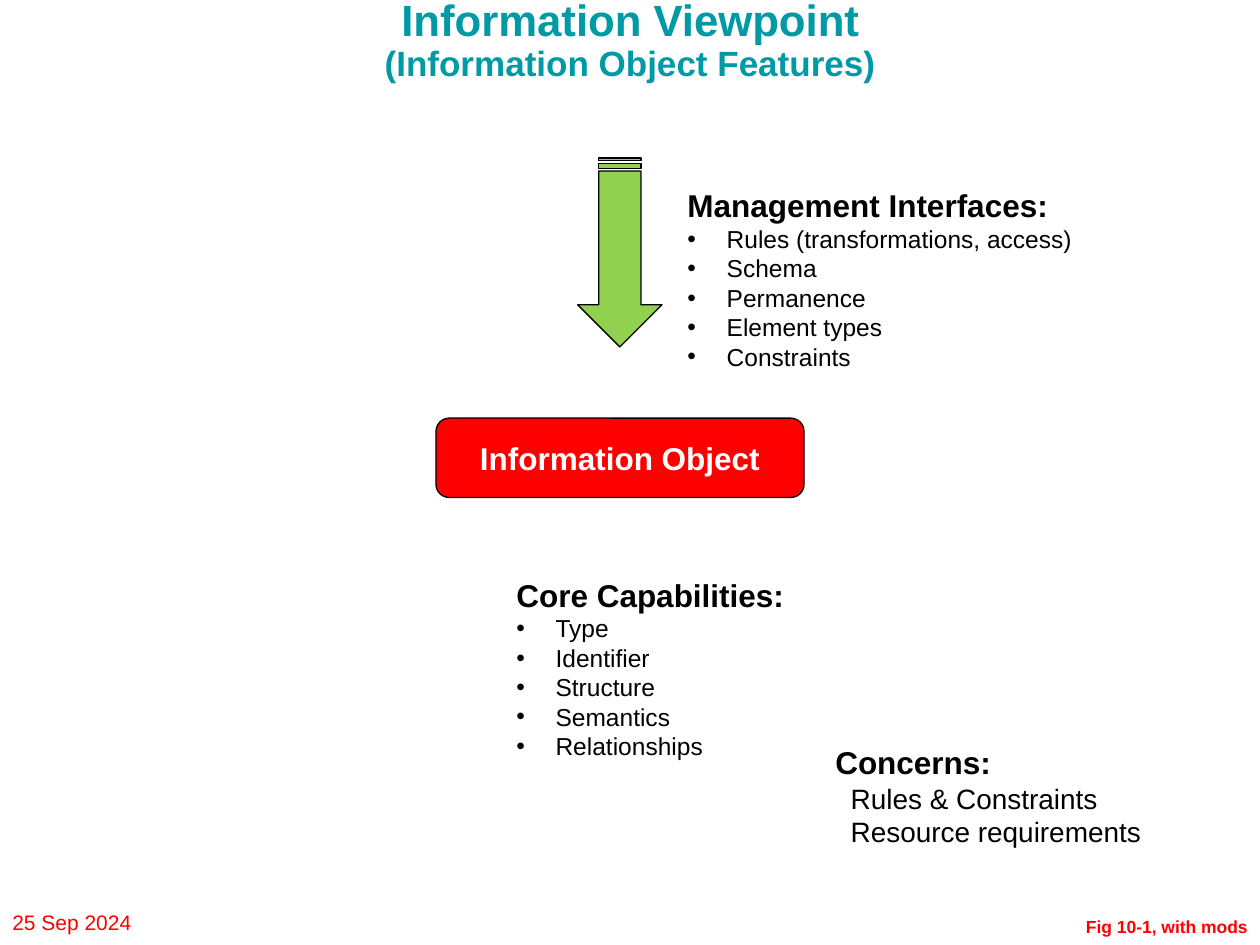
from pptx import Presentation
from pptx.util import Cm, Pt
from pptx.dml.color import RGBColor
from pptx.enum.shapes import MSO_SHAPE
from pptx.enum.text import MSO_ANCHOR, PP_ALIGN
from lxml import etree

ROUND = MSO_SHAPE.ROUNDED_RECTANGLE
ARROW = MSO_SHAPE.STRIPED_RIGHT_ARROW
TOP, MID = MSO_ANCHOR.TOP, MSO_ANCHOR.MIDDLE
LEFT, MIDDLE, RIGHT = PP_ALIGN.LEFT, PP_ALIGN.CENTER, PP_ALIGN.RIGHT
FONT = "Arial"
BLACK, WHITE, RED, GREEN, TEAL = "000000", "FFFFFF", "FF0000", "92D050", "0099A6"
NS = "{http://schemas.openxmlformats.org/drawingml/2006/main}"


def color(code):
    return RGBColor.from_string(code)


def add_line(frame, text, size, code=BLACK, bold=False, align=LEFT):
    """Add one paragraph with one run, using the empty first one if free."""
    para = frame.paragraphs[0]
    if para.runs:
        para = frame.add_paragraph()
    para.alignment = align
    run = para.add_run()
    run.text = text
    font = run.font
    font.name, font.size, font.bold = FONT, Pt(size), bold
    font.color.rgb = color(code)
    return para


def indent(para, left, bullet=None):
    """Indent a paragraph; a bullet hangs at its left edge."""
    props = para._p.get_or_add_pPr()
    props.set("marL", str(Cm(left)))
    if bullet:
        props.set("indent", str(-Cm(left)))
        etree.SubElement(props, NS + "buFont", typeface=FONT)
        etree.SubElement(props, NS + "buChar", char=bullet)


def add_box(slide, x, y, w, h, anchor=TOP):
    frame = slide.shapes.add_textbox(Cm(x), Cm(y), Cm(w), Cm(h)).text_frame
    frame.word_wrap = True
    frame.vertical_anchor = anchor
    return frame


def add_list(slide, x, y, w, h, head, items, size, left, bullet=None):
    """Add a bold heading with indented items below it."""
    frame = add_box(slide, x, y, w, h)
    add_line(frame, head, 18, bold=True)
    for item in items:
        indent(add_line(frame, item, size), left, bullet)


def add_form(slide, kind, x, y, w, h, fill):
    form = slide.shapes.add_shape(kind, Cm(x), Cm(y), Cm(w), Cm(h))
    form.shadow.inherit = False
    form.fill.solid()
    form.fill.fore_color.rgb = color(fill)
    form.line.color.rgb = color(BLACK)
    form.line.width = Pt(0.75)
    return form


def main():
    deck = Presentation()
    deck.slide_width, deck.slide_height = Cm(25.4), Cm(19.05)
    slide = deck.slides.add_slide(deck.slide_layouts[6])

    # Title
    title = add_box(slide, 3.28, -0.15, 18.85, 1.22)
    for text, size in (("Information Viewpoint", 25),
                       ("(Information Object Features)", 20)):
        add_line(title, text, size, TEAL, True, MIDDLE).line_spacing = 0.9

    # Information object and the arrow leading to it
    core = add_form(slide, ROUND, 8.79, 8.43, 7.42, 1.6, RED).text_frame
    core.word_wrap = False
    core.vertical_anchor = MID
    add_line(core, "Information Object", 18, WHITE, True, MIDDLE)
    add_form(slide, ARROW, 10.59, 4.24, 3.81, 1.7, GREEN).rotation = 90

    # Feature lists
    add_list(slide, 13.61, 3.63, 8.4, 4.01, "Management Interfaces:",
             ["Rules (transformations, access)", "Schema", "Permanence",
              "Element types", "Constraints"], 14, 0.79, "•")
    add_list(slide, 10.16, 11.48, 6.1, 4.01, "Core Capabilities:",
             ["Type", "Identifier", "Structure", "Semantics",
              "Relationships"], 14, 0.79, "•")
    add_list(slide, 16.59, 14.86, 7.09, 2.39, "Concerns:",
             ["Rules & Constraints", "Resource requirements"], 16, 0.31)

    # Footer
    add_line(add_box(slide, 0, 18.21, 5.28, 1.27), "25 Sep 2024", 12, RED)
    add_line(add_box(slide, 20.6, 18.31, 4.8, 0.74, MID),
             "Fig 10-1, with mods", 10, RED, True, RIGHT)

    deck.save("out.pptx")


if __name__ == "__main__":
    main()
